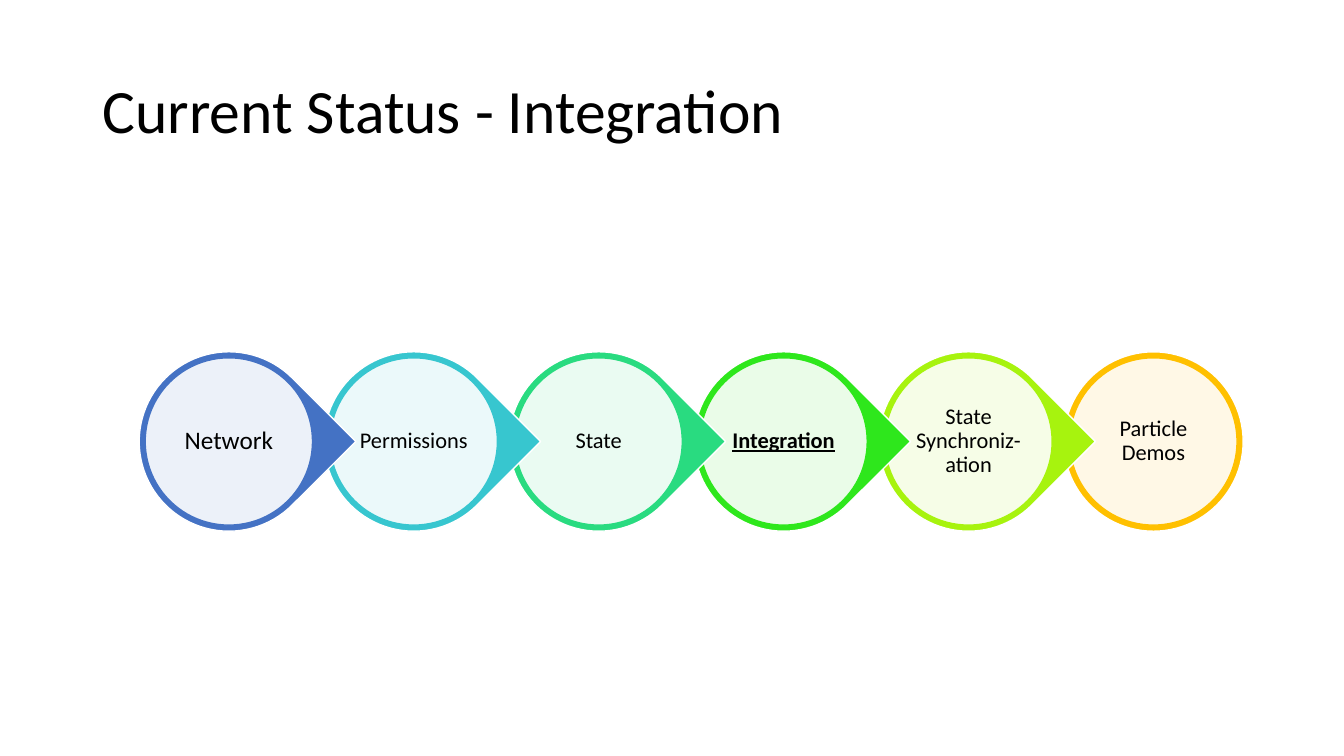
"""Build a slide that shows project status as a chain of circles."""
from dataclasses import dataclass

from lxml import etree
from pptx import Presentation
from pptx import util as u
from pptx.dml.color import RGBColor
from pptx.enum import shapes, text
from pptx.oxml.ns import qn


@dataclass(frozen=True)
class Theme:
    """Colours, font and type sizes of the slide."""
    font: str = "Calibri"
    ink: str = "000000"
    white: str = "FFFFFF"
    title: int = 44
    lead: int = 18
    label: int = 16
    veil: int = 90


THEME = Theme()
STEPS = [
    ("Network", "4472C4", {"size": THEME.lead, "inset": 0.03}),
    ("Permissions", "37C6CF", {}),
    ("State", "29DB80", {}),
    ("Integration", "2EE71C", {"bold": True, "underline": True}),
    ("State Synchroniz-ation", "A7F30E", {}),
    ("Particle Demos", "FFC000", {}),
]
LEFT, TOP, PITCH = 1.38, 3.49, 9.17 / 5
OUTER, INNER, LABEL = 1.78, 1.66, 1.18


def add_text(slide, words, box, size=THEME.label, inset=0.02,
             align=text.PP_ALIGN.CENTER, bold=False, underline=False):
    """Add a wrapped text box, centred in height."""
    frame = slide.shapes.add_textbox(*map(u.Inches, box)).text_frame
    frame.word_wrap = True
    frame.vertical_anchor = text.MSO_ANCHOR.MIDDLE
    frame.margin_left = frame.margin_right = u.Inches(inset)
    frame.margin_top = frame.margin_bottom = u.Inches(inset)
    para = frame.paragraphs[0]
    para.alignment = align
    para.line_spacing = 0.9
    run = para.add_run()
    run.text = words
    font = run.font
    font.name, font.size = THEME.font, u.Pt(size)
    font.bold, font.underline = bold, underline
    font.color.rgb = RGBColor.from_string(THEME.ink)


def add_disc(slide, kind, box, fill, line, turn=0, alpha=100):
    """Add a round shape with a thin outline."""
    disc = slide.shapes.add_shape(kind, *map(u.Inches, box))
    disc.shadow.inherit = False
    disc.rotation = turn
    disc.fill.solid()
    disc.fill.fore_color.rgb = RGBColor.from_string(fill)
    disc.line.color.rgb = RGBColor.from_string(line)
    disc.line.width = u.Pt(1)
    if alpha < 100:
        color = disc.fill._xPr.find(qn("a:solidFill"))[0]
        etree.SubElement(color, qn("a:alpha"), val=str(alpha * 1000))


def centre(index, size):
    """Return a square box centred on one step of the chain."""
    inset = (OUTER - size) / 2
    return LEFT + index * PITCH + inset, TOP + inset, size, size


def add_step(slide, index, words, color, style):
    """Add one step: a pointed ring, a pale disc and its label."""
    kind, turn = shapes.MSO_SHAPE.TEAR, 45
    if index == len(STEPS) - 1:
        kind, turn = shapes.MSO_SHAPE.OVAL, 0
    add_disc(slide, kind, centre(index, OUTER), color, THEME.white, turn)
    add_disc(slide, shapes.MSO_SHAPE.OVAL, centre(index, INNER),
             THEME.white, color, alpha=THEME.veil)
    add_text(slide, words, centre(index, LABEL), **style)


def main():
    """Build and save the slide."""
    deck = Presentation()
    deck.slide_width, deck.slide_height = u.Inches(13.33), u.Inches(7.5)
    slide = deck.slides.add_slide(deck.slide_layouts[6])
    add_text(slide, "Current Status - Integration", (0.92, 0.4, 11.5, 1.45),
             size=THEME.title, inset=0.1, align=text.PP_ALIGN.LEFT)
    for index, step in reversed(list(enumerate(STEPS))):
        add_step(slide, index, *step)
    deck.save("out.pptx")


if __name__ == "__main__":
    main()
